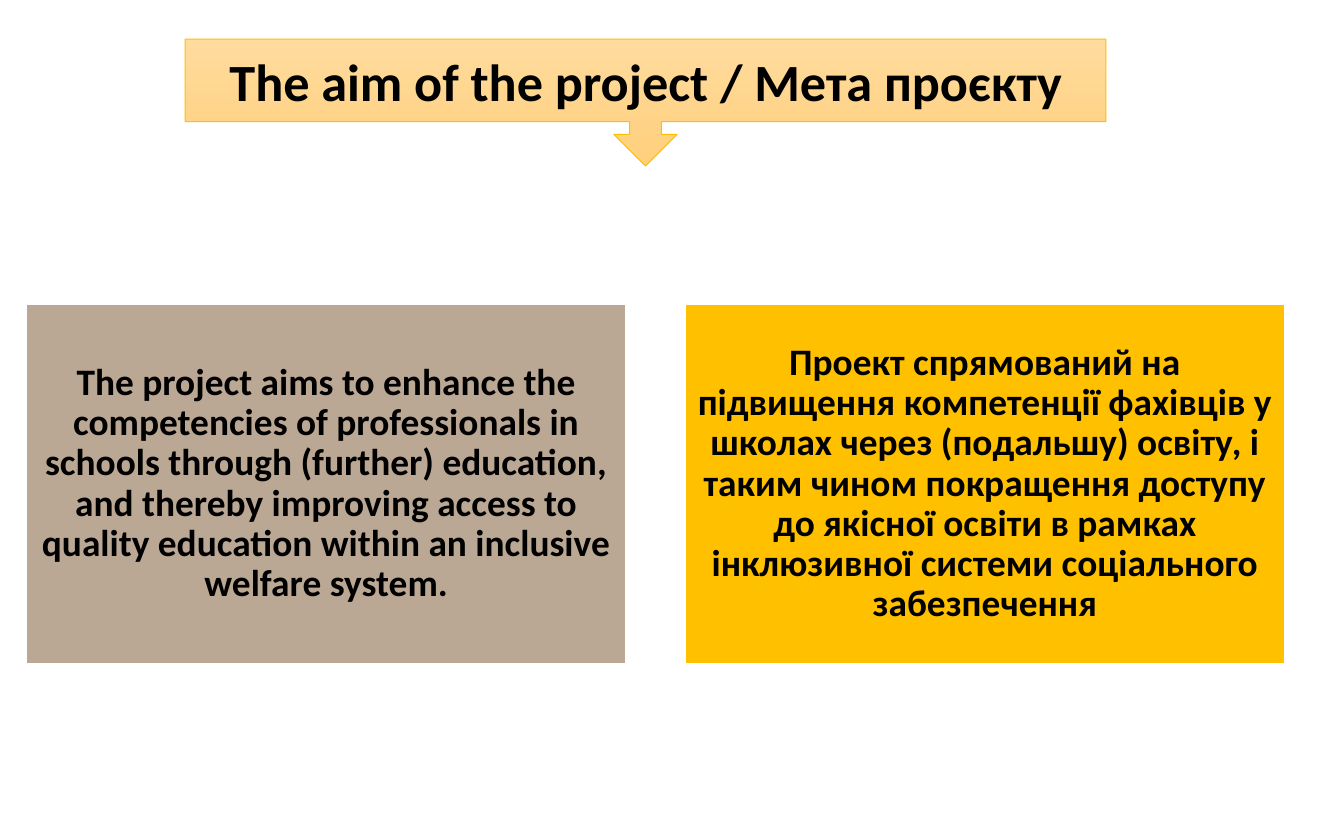
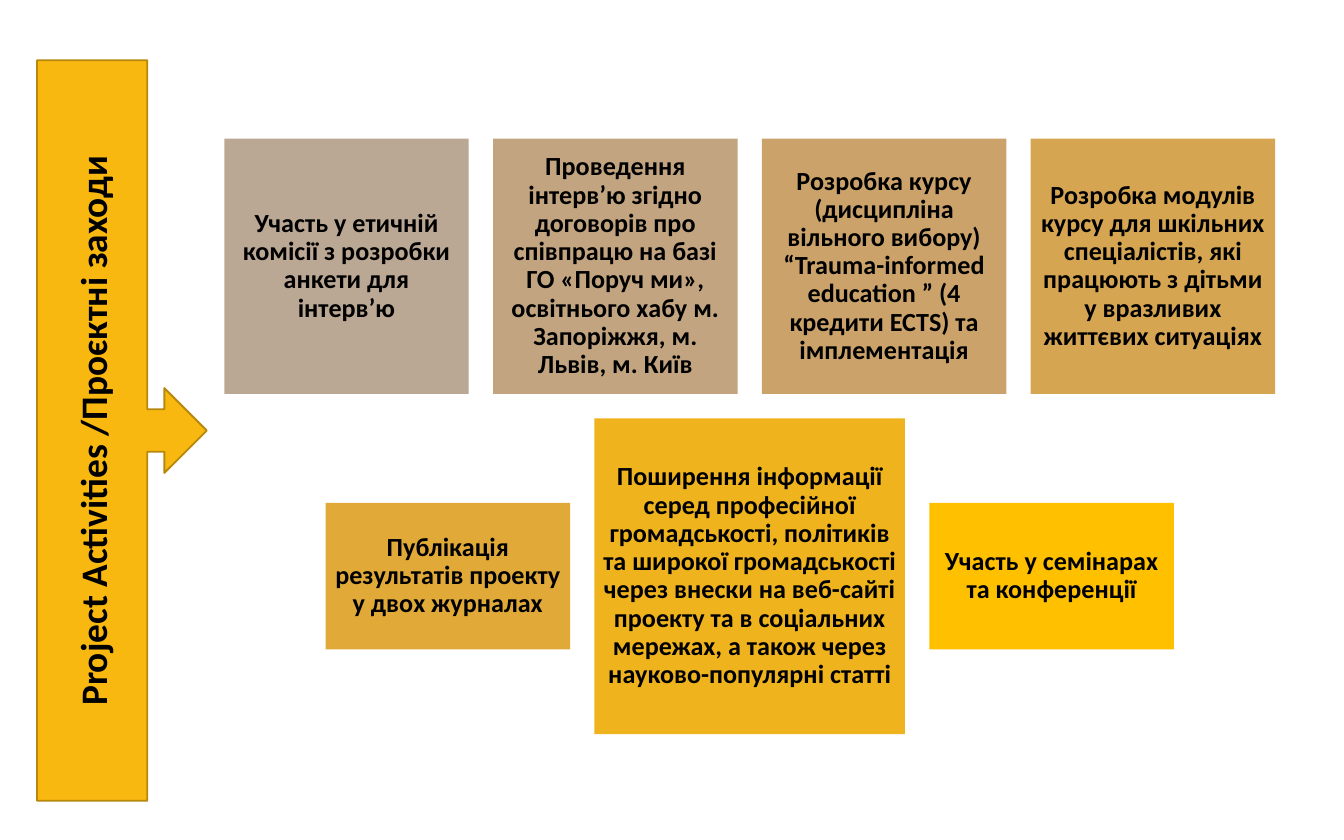
import pptx
import pptx.dml.color
import pptx.enum.shapes
import pptx.enum.text
import pptx.util

Cm = pptx.util.Cm
Pt = pptx.util.Pt
SHAPES = pptx.enum.shapes.MSO_SHAPE

FONT = "Calibri"
INK = "000000"
WHITE = "FFFFFF"
TAUPE = "BBA894"
GOLD = "FFC000"
AMBER = "F9B810"
DARK_GOLD = "B8880C"
PALE_ORANGE = ("FFDB9E", "FFD07C")

AIMS = [
    (TAUPE, "The project aims to enhance the competencies of professionals in schools "
            "through (further) education, and thereby improving access to quality "
            "education within an inclusive welfare system."),
    (GOLD, "Проект спрямований на підвищення компетенції фахівців у школах через "
           "(подальшу) освіту, і таким чином покращення доступу до якісної освіти в "
           "рамках інклюзивної системи соціального забезпечення"),
]

PREPARATION = [
    (4.62, 4.83, TAUPE, "Участь у етичній комісії з розробки анкети для інтерв’ю"),
    (4.62, 4.83, "C2A480", "Проведення інтервʼю згідно договорів про співпрацю на базі "
                           "ГО «Поруч ми», освітнього хабу м. Запоріжжя, м. Львів, м. Київ"),
    (4.62, 4.83, "CBA36A", "Розробка курсу (дисципліна вільного вибору) “Trauma-informed "
                           "education ” (4 кредити ECTS) та імплементація"),
    (4.62, 4.83, "D5A552", "Розробка модулів курсу для шкільних спеціалістів, які "
                           "працюють з дітьми у вразливих життєвих ситуаціях"),
]

DISSEMINATION = [
    (4.62, 2.77, "E1AA38", "Публікація результатів проекту у двох журналах"),
    (5.87, 5.97, "EFB31D", "Поширення інформації серед професійної громадськості, політиків "
                           "та широкої громадськості через внески на веб-сайті проекту та в "
                           "соціальних мережах, а також через науково-популярні статті"),
    (4.62, 2.77, GOLD, "Участь у семінарах та конференції"),
]


def color(code):
    """Turn a hex string into a colour."""
    return pptx.dml.color.RGBColor.from_string(code)


def add_block(slide, kind, box, fill, text, size, line=None, line_width=1):
    """Add a filled shape with centred bold text; box is in centimetres."""
    block = slide.shapes.add_shape(kind, *(Cm(length) for length in box))
    block.shadow.inherit = False
    if isinstance(fill, tuple):
        block.fill.gradient()
        block.fill.gradient_angle = 270
        for stop, code in zip(block.fill.gradient_stops, fill):
            stop.color.rgb = color(code)
    else:
        block.fill.solid()
        block.fill.fore_color.rgb = color(fill)
    if line:
        block.line.color.rgb = color(line)
        block.line.width = Pt(line_width)
    else:
        block.line.fill.background()
    frame = block.text_frame
    frame.word_wrap = True
    frame.vertical_anchor = pptx.enum.text.MSO_ANCHOR.MIDDLE
    paragraph = frame.paragraphs[0]
    paragraph.text = text
    paragraph.alignment = pptx.enum.text.PP_ALIGN.CENTER
    paragraph.font.name = FONT
    paragraph.font.size = Pt(size)
    paragraph.font.bold = True
    paragraph.font.color.rgb = color(INK)
    return block


def add_card(slide, box, fill, text, size, inset, line=None):
    """Add a rectangle with even insets and tight line spacing."""
    card = add_block(slide, SHAPES.RECTANGLE, box, fill, text, size, line)
    frame = card.text_frame
    frame.margin_left = frame.margin_right = Cm(inset)
    frame.margin_top = frame.margin_bottom = Cm(inset)
    frame.paragraphs[0].line_spacing = 0.9


def add_aim_panels(slide, box, gap):
    """Split the box into equal panels, one for each language."""
    left, top, width, height = box
    panel_width = (width - gap * (len(AIMS) - 1)) / len(AIMS)
    for index, (fill, text) in enumerate(AIMS):
        panel = (left + index * (panel_width + gap), top, panel_width, height)
        add_card(slide, panel, fill, text, 20, 0.2, WHITE)


def add_activity_rows(slide, box, gap):
    """Stack rows of activities, each row centred across the box."""
    left, top, width = box
    for row in (PREPARATION, DISSEMINATION):
        row_width = sum(activity[0] for activity in row) + gap * (len(row) - 1)
        row_height = max(activity[1] for activity in row)
        x = left + (width - row_width) / 2
        for card_width, card_height, fill, text in row:
            y = top + (row_height - card_height) / 2
            add_card(slide, (x, y, card_width, card_height), fill, text, 14, 0.15)
            x += card_width + gap
        top += row_height + gap


def build_aim(slide):
    """Build the slide on the aim of the project."""
    add_block(slide, SHAPES.DOWN_ARROW_CALLOUT, (3.5, 0.74, 17.4, 2.4), PALE_ORANGE,
              "The aim of the project / Мета проєкту", 28, GOLD, 0.5)
    add_aim_panels(slide, (0.5, 5.75, 23.78, 6.8), 1.12)


def build_activities(slide):
    """Build the slide on the project activities."""
    heading = add_block(slide, SHAPES.RIGHT_ARROW_CALLOUT, (0.7, 1.14, 3.21, 14), AMBER,
                        "Project Activities /Проєктні заходи", 20, DARK_GOLD)
    heading.element.txBody.bodyPr.set("vert", "vert270")
    add_activity_rows(slide, (4.24, 2.62, 19.86), 0.46)


def main():
    """Build both slides and save the presentation."""
    presentation = pptx.Presentation()
    presentation.slide_width = Cm(25.4)
    presentation.slide_height = Cm(15.88)
    blank = presentation.slide_layouts[6]
    for build in (build_aim, build_activities):
        build(presentation.slides.add_slide(blank))
    presentation.save("out.pptx")


if __name__ == "__main__":
    main()
